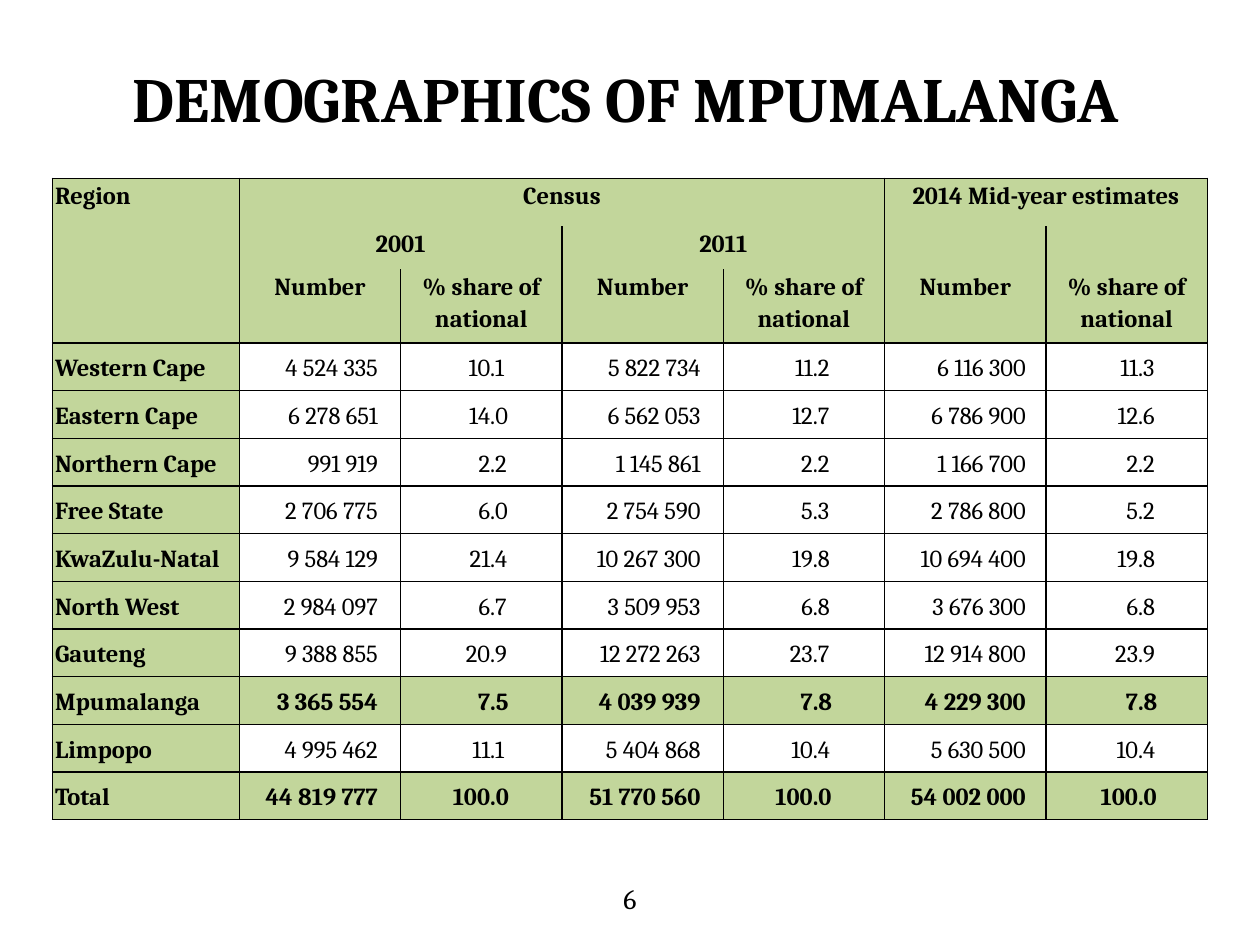
from dataclasses import dataclass

import pptx
import pptx.dml.color
import pptx.enum.text
import pptx.oxml.ns
import pptx.util
from lxml import etree

Pt = pptx.util.Pt
RGB = pptx.dml.color.RGBColor
ALIGN = pptx.enum.text.PP_ALIGN
ANCHOR = pptx.enum.text.MSO_ANCHOR
qn = pptx.oxml.ns.qn


@dataclass(frozen=True)
class Theme:
    font: str = "Cambria"
    ink: str = "000000"
    green: str = "C2D69B"
    title: int = 36
    table: int = 14
    page: int = 16
    line: int = 1


THEME = Theme()
REGION_W, VALUE_W = 106.8, 92.2
ROW_H, YEAR_H, HEADING_H = 27.25, 24.6, 42.2
NUMBER_TAB, SHARE_TAB = (77.76, "r"), (49.68, "dec")
HEADER_ROWS = 3

HEADER = [
    ["Region", "Census", "", "", "", "2014 Mid-year estimates", ""],
    ["", "2001", "", "2011", "", "", ""],
    [""] + ["Number", "% share of national"] * 3,
]
MERGES = [(0, 0, 2, 0), (0, 1, 0, 4), (0, 5, 0, 6), (1, 1, 1, 2), (1, 3, 1, 4)]
REGIONS = [
    ["Western Cape", "4 524 335", "10.1", "5 822 734", "11.2", "6 116 300", "11.3"],
    ["Eastern Cape", "6 278 651", "14.0", "6 562 053", "12.7", "6 786 900", "12.6"],
    ["Northern Cape", "991 919", "2.2", "1 145 861", "2.2", "1 166 700", "2.2"],
    ["Free State", "2 706 775", "6.0", "2 754 590", "5.3", "2 786 800", "5.2"],
    ["KwaZulu-Natal", "9 584 129", "21.4", "10 267 300", "19.8", "10 694 400", "19.8"],
    ["North West", "2 984 097", "6.7", "3 509 953", "6.8", "3 676 300", "6.8"],
    ["Gauteng", "9 388 855", "20.9", "12 272 263", "23.7", "12 914 800", "23.9"],
    ["Mpumalanga", "3 365 554", "7.5", "4 039 939", "7.8", "4 229 300", "7.8"],
    ["Limpopo", "4 995 462", "11.1", "5 404 868", "10.4", "5 630 500", "10.4"],
    ["Total", "44 819 777", "100.0", "51 770 560", "100.0", "54 002 000", "100.0"],
]
HIGHLIGHTED = {"Mpumalanga", "Total"}


def style_paragraph(p, size, bold=False, align=ALIGN.LEFT):
    p.alignment = align
    p.font.name = THEME.font
    p.font.size = Pt(size)
    p.font.bold = bold
    p.font.color.rgb = RGB.from_string(THEME.ink)


def add_tab(p, position, kind):
    tabs = etree.SubElement(p._p.get_or_add_pPr(), qn("a:tabLst"))
    etree.SubElement(tabs, qn("a:tab"), pos=str(Pt(position)), algn=kind)


def set_borders(cell, sides):
    tcPr = cell._tc.get_or_add_tcPr()
    for i, side in enumerate("LRTB"):
        ln = etree.Element(qn(f"a:ln{side}"), w=str(Pt(THEME.line)))
        if side in sides:
            fill = etree.SubElement(ln, qn("a:solidFill"))
            etree.SubElement(fill, qn("a:srgbClr"), val=THEME.ink)
        else:
            etree.SubElement(ln, qn("a:noFill"))
        tcPr.insert(i, ln)


def border_sides(row, col):
    if row >= HEADER_ROWS or col == 0:
        return "LRTB"
    return "LR" + ("T" if row == 0 else "") + ("B" if row == HEADER_ROWS - 1 else "")


def fill_cell(cell, row, col, text, highlighted):
    is_header = row < HEADER_ROWS
    is_value = not is_header and col > 0
    cell.margin_top = cell.margin_bottom = 0
    cell.margin_left = cell.margin_right = Pt(3 if is_value and col > 4 else 1.5)
    cell.vertical_anchor = ANCHOR.TOP if is_header else ANCHOR.MIDDLE
    p = cell.text_frame.paragraphs[0]
    p.line_spacing = 1.15
    if is_value:
        add_tab(p, *(NUMBER_TAB if col % 2 else SHARE_TAB))
        text = "\t" + text
    if text:
        p.add_run().text = text
    align = ALIGN.CENTER if is_header and col else ALIGN.LEFT
    style_paragraph(p, THEME.table, not is_value or highlighted, align)
    if is_value and not highlighted:
        cell.fill.background()
    else:
        cell.fill.solid()
        cell.fill.fore_color.rgb = RGB.from_string(THEME.green)
    set_borders(cell, border_sides(row, col))


def add_population_table(s, left, top):
    rows = HEADER + REGIONS
    widths = [REGION_W] + [VALUE_W] * 6
    heights = [ROW_H, YEAR_H, HEADING_H] + [ROW_H] * len(REGIONS)
    table = s.shapes.add_table(len(rows), len(widths), Pt(left), Pt(top),
                               Pt(sum(widths)), Pt(sum(heights))).table
    table.first_row = table.horz_banding = False
    for column, width in zip(table.columns, widths):
        column.width = Pt(width)
    for row, height in zip(table.rows, heights):
        row.height = Pt(height)
    for r, values in enumerate(rows):
        for c, text in enumerate(values):
            fill_cell(table.cell(r, c), r, c, text, values[0] in HIGHLIGHTED)
    for r1, c1, r2, c2 in MERGES:
        table.cell(r1, c1).merge(table.cell(r2, c2))


def set_title(s, text):
    sp = s.shapes.title
    sp.left, sp.top, sp.width, sp.height = Pt(31), Pt(0), Pt(653), Pt(111.6)
    tf = sp.text_frame
    tf.text = text
    tf.vertical_anchor = ANCHOR.MIDDLE
    style_paragraph(tf.paragraphs[0], THEME.title, True, ALIGN.CENTER)


def add_page_number(s, text):
    tf = s.shapes.add_textbox(Pt(246), Pt(500.4), Pt(228), Pt(28.8)).text_frame
    tf.word_wrap = True
    tf.text = text
    style_paragraph(tf.paragraphs[0], THEME.page, align=ALIGN.CENTER)


def main():
    prs = pptx.Presentation()
    prs.slide_width, prs.slide_height = Pt(720), Pt(540)
    s = prs.slides.add_slide(prs.slide_layouts[5])
    set_title(s, "DEMOGRAPHICS OF MPUMALANGA")
    add_population_table(s, 30, 102)
    add_page_number(s, "6")
    prs.save("out.pptx")


if __name__ == "__main__":
    main()
